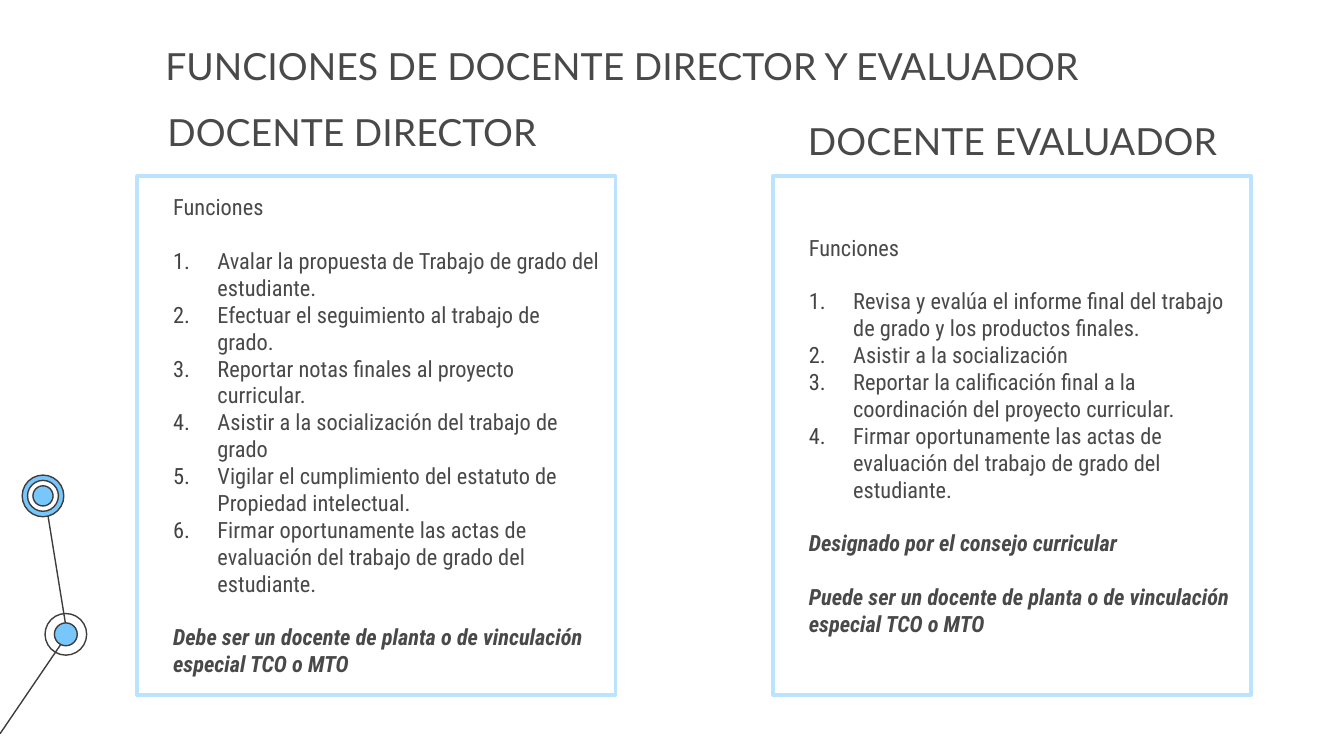
from dataclasses import dataclass

from lxml import etree
from pptx import Presentation
from pptx.dml.color import RGBColor
from pptx.enum.shapes import MSO_CONNECTOR, MSO_SHAPE
from pptx.enum.text import MSO_ANCHOR, PP_ALIGN
from pptx.oxml.ns import qn
from pptx.util import Inches, Pt

OVAL, RECT = MSO_SHAPE.OVAL, MSO_SHAPE.RECTANGLE
STRAIGHT = MSO_CONNECTOR.STRAIGHT
LEFT, CENTER = PP_ALIGN.LEFT, PP_ALIGN.CENTER
TOP, MIDDLE = MSO_ANCHOR.TOP, MSO_ANCHOR.MIDDLE


@dataclass(frozen=True)
class Theme:
    text: str = "494949"
    number: str = "434343"
    ink: str = "3D3D3D"
    blue: str = "77C6FC"
    border: str = "BBE3FE"
    white: str = "FFFFFF"
    head_font: str = "Lato"
    body_font: str = "Roboto Condensed"
    head_size: float = 20
    body_size: float = 12
    blank_line: float = 14.4
    thin: float = 0.75
    thick: float = 2


@dataclass(frozen=True)
class Heading:
    text: str
    box: tuple


@dataclass(frozen=True)
class Card:
    left: float
    duties: tuple
    notes: tuple


@dataclass(frozen=True)
class Node:
    x: float
    y: float
    rings: tuple  # (radius, fill or None), outermost first


T = Theme()
SLIDE_W = 10
SLIDE_H = SLIDE_W * 9 / 16
CARD_TOP, CARD_W, CARD_H = 1.31, 3.56, 3.86
STAFF_NOTE = "Debe ser un docente de planta o de vinculación especial TCO o MTO"
SIGN_DUTY = ("Firmar oportunamente las actas de evaluación del trabajo "
             "de grado del estudiante.")

HEADINGS = (
    Heading("FUNCIONES DE DOCENTE DIRECTOR Y EVALUADOR", (0.3, 0.22, 8.66, 0.34)),
    Heading("DOCENTE DIRECTOR", (1.02, 0.71, 3.2, 0.63)),
    Heading("DOCENTE EVALUADOR", (5.3, 0.78, 4.47, 0.63)),
)
CARDS = (
    Card(1.02, (
        "Avalar la propuesta de Trabajo de grado del estudiante.",
        "Efectuar el seguimiento al trabajo de grado.",
        "Reportar notas finales al proyecto curricular.",
        "Asistir a la socialización del trabajo de grado",
        "Vigilar el cumplimiento del estatuto de Propiedad intelectual.",
        SIGN_DUTY,
    ), (STAFF_NOTE,)),
    Card(5.75, (
        "Revisa y evalúa el informe final del trabajo de grado y los productos finales.",
        "Asistir a la socialización",
        "Reportar la calificación final a la coordinación del proyecto curricular.",
        SIGN_DUTY,
    ), ("Designado por el consejo curricular", STAFF_NOTE.replace("Debe", "Puede"))),
)
LINKS = ((0.5, 4.72, 0.33, 3.67), (0, 5.46, 0.49, 4.74))
NODES = (
    Node(0.49, 4.72, ((0.155, None), (0.085, T.blue))),
    Node(0.32, 3.69, ((0.155, T.blue), (0.115, T.white), (0.075, T.blue))),
)


def rgb(color: str) -> RGBColor:
    return RGBColor.from_string(color)


def add_link(s, x1: float, y1: float, x2: float, y2: float):
    line = s.shapes.add_connector(
        STRAIGHT, Inches(x1), Inches(y1), Inches(x2), Inches(y2))
    line.line.color.rgb = rgb(T.ink)
    line.line.width = Pt(T.thin)
    etree.SubElement(line._element.spPr, qn("a:effectLst"))


def add_box(s, kind, box: tuple, fill: str | None, line: str, width: float):
    sp = s.shapes.add_shape(kind, *map(Inches, box))
    sp.shadow.inherit = False
    if fill:
        sp.fill.solid()
        sp.fill.fore_color.rgb = rgb(fill)
    else:
        sp.fill.background()
    sp.line.color.rgb = rgb(line)
    sp.line.width = Pt(width)
    return sp


def add_node(s, node: Node):
    for r, fill in node.rings:
        add_box(s, OVAL, (node.x - r, node.y - r, 2 * r, 2 * r), fill, T.ink, T.thin)


def setup_frame(sp, anchor, right: float = 0.1):
    tf = sp.text_frame
    tf.word_wrap = True
    tf.vertical_anchor = anchor
    tf.margin_left = tf.margin_top = tf.margin_bottom = Inches(0.1)
    tf.margin_right = Inches(right)
    return tf


def write(tf, text: str, *, font: str = T.body_font, size: float = T.body_size,
          strong: bool = False, align=LEFT, margin: float = 0, hanging: float = 0,
          before: float = 0, after: float = 0, numbered: bool = False):
    """Write one paragraph, reusing the frame's empty first one."""
    p = tf.paragraphs[0] if not tf.text else tf.add_paragraph()
    p.alignment = align
    p.space_before, p.space_after = Pt(before), Pt(after)
    r = p.add_run()
    r.text = text
    r.font.name, r.font.size = font, Pt(size)
    r.font.bold = r.font.italic = strong
    r.font.color.rgb = rgb(T.text)
    pPr = p._p.get_or_add_pPr()
    pPr.set("marL", str(Inches(margin)))
    pPr.set("indent", str(Inches(-hanging)))
    if numbered:
        color = etree.SubElement(pPr, qn("a:buClr"))
        etree.SubElement(color, qn("a:srgbClr"), val=T.number)
        etree.SubElement(pPr, qn("a:buFont"), typeface=font)
        etree.SubElement(pPr, qn("a:buAutoNum"), type="arabicPeriod")


def add_heading(s, heading: Heading):
    tf = setup_frame(s.shapes.add_textbox(*map(Inches, heading.box)), TOP)
    write(tf, heading.text, font=T.head_font, size=T.head_size, align=CENTER)


def add_card(s, card: Card):
    box = (card.left, CARD_TOP, CARD_W, CARD_H)
    sp = add_box(s, RECT, box, T.white, T.border, T.thick)
    tf = setup_frame(sp, MIDDLE, right=0.11)
    write(tf, "Funciones", margin=0.17, after=T.blank_line)
    for duty in card.duties:
        write(tf, duty, margin=0.5, hanging=0.33, numbered=True)
    for note in card.notes:
        write(tf, note, margin=0.17, before=T.blank_line, strong=True)


def main():
    prs = Presentation()
    prs.slide_width, prs.slide_height = Inches(SLIDE_W), Inches(SLIDE_H)
    s = prs.slides.add_slide(prs.slide_layouts[6])

    # Linked nodes at the left edge
    for link in LINKS:
        add_link(s, *link)
    for node in NODES:
        add_node(s, node)

    # Role cards and headings
    for card in CARDS:
        add_card(s, card)
    for heading in HEADINGS:
        add_heading(s, heading)

    prs.save("out.pptx")


if __name__ == "__main__":
    main()
